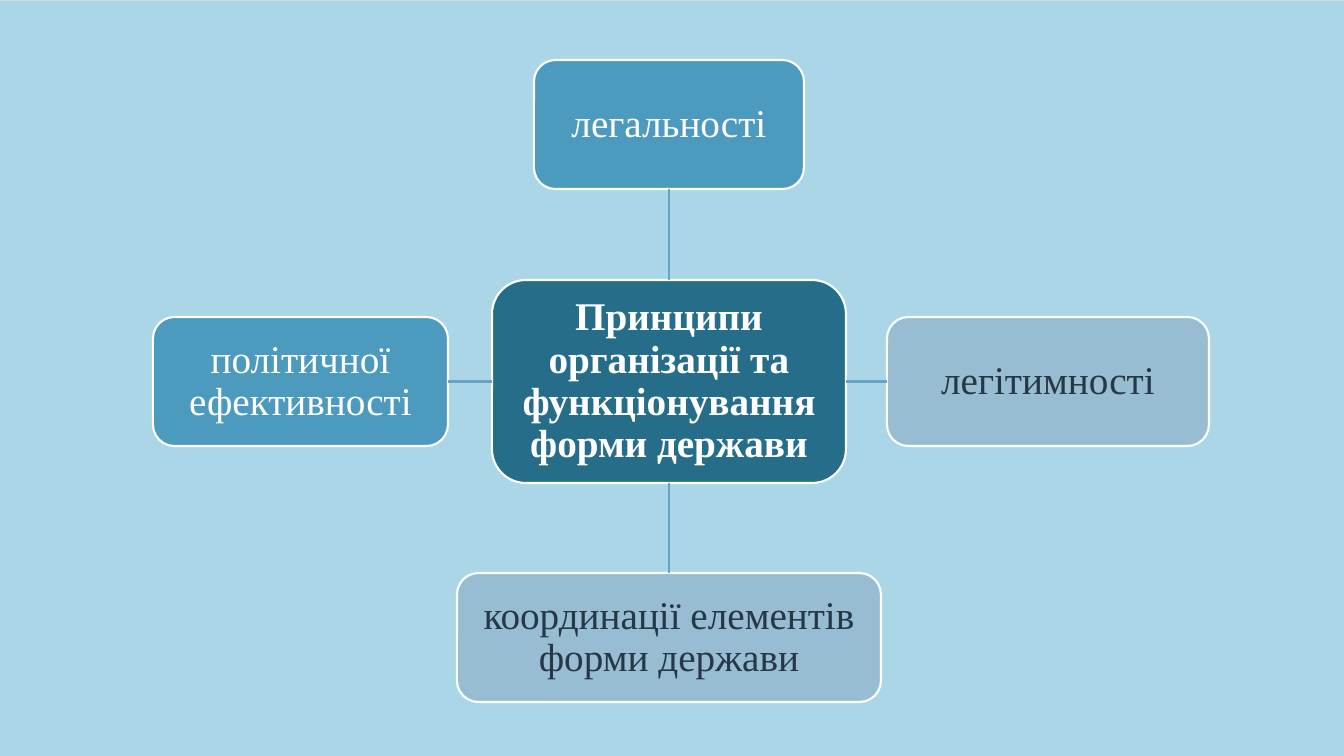
from dataclasses import dataclass

from pptx import Presentation
from pptx.dml.color import RGBColor
from pptx.enum.dml import MSO_PATTERN
from pptx.enum.shapes import MSO_CONNECTOR, MSO_SHAPE
from pptx.enum.text import MSO_ANCHOR, PP_ALIGN
from pptx.oxml.ns import qn
from pptx.shapes.autoshape import Shape
from pptx.slide import Slide
from pptx.util import Emu, Pt
from lxml import etree

ROUNDED = MSO_SHAPE.ROUNDED_RECTANGLE
STRAIGHT = MSO_CONNECTOR.STRAIGHT
MIDDLE = MSO_ANCHOR.MIDDLE
CENTER = PP_ALIGN.CENTER
DARK_HORIZONTAL = MSO_PATTERN.DARK_HORIZONTAL

SLIDE_WIDTH, SLIDE_HEIGHT = 1344, 756
EMU_PER_PX = 12192000 / SLIDE_WIDTH

SKY = RGBColor(0xAA, 0xD6, 0xE7)
GREY = RGBColor(0xD9, 0xD9, 0xD9)
WHITE = RGBColor(0xFF, 0xFF, 0xFF)
TEAL = RGBColor(0x26, 0x6D, 0x8A)
BLUE = RGBColor(0x4D, 0x9A, 0xBF)
PALE_BLUE = RGBColor(0x98, 0xBC, 0xD1)
NAVY = RGBColor(0x25, 0x38, 0x48)
LINK_BLUE = RGBColor(0x67, 0xA3, 0xC2)

FONT = "Times New Roman"
FONT_SIZE = Pt(28)
LINE_WIDTH = Pt(1.5)
TEXT_INSET = 8
TOP, LEFT, BOTTOM, RIGHT = range(4)


@dataclass(frozen=True)
class Box:
    text: str
    left: int
    top: int
    width: int
    height: int
    fill: RGBColor
    text_color: RGBColor
    bold: bool = False


@dataclass(frozen=True)
class Principle:
    box: Box
    hub_side: int
    own_side: int


HUB = Box("Принципи організації та функціонування форми держави",
          492, 280, 354, 203, TEAL, WHITE, bold=True)
PRINCIPLES = [
    Principle(Box("легальності", 534, 60, 270, 129, BLUE, WHITE), TOP, BOTTOM),
    Principle(Box("легітимності", 887, 317, 322, 129, PALE_BLUE, NAVY), RIGHT, LEFT),
    Principle(Box("координації елементів форми держави",
                  457, 573, 424, 129, PALE_BLUE, NAVY), BOTTOM, TOP),
    Principle(Box("політичної ефективності", 153, 317, 295, 129, BLUE, WHITE),
              LEFT, RIGHT),
]


def px(length: int) -> Emu:
    return Emu(round(length * EMU_PER_PX))


def add_box(slide: Slide, box: Box) -> Shape:
    shape = slide.shapes.add_shape(
        ROUNDED, px(box.left), px(box.top), px(box.width), px(box.height))
    shape.shadow.inherit = False
    shape.fill.solid()
    shape.fill.fore_color.rgb = box.fill
    shape.line.color.rgb = WHITE
    shape.line.width = LINE_WIDTH

    frame = shape.text_frame
    frame.word_wrap = True
    frame.vertical_anchor = MIDDLE
    frame.margin_left = frame.margin_right = px(TEXT_INSET)
    frame.margin_top = frame.margin_bottom = px(TEXT_INSET)
    frame.text = box.text
    paragraph = frame.paragraphs[0]
    paragraph.alignment = CENTER
    paragraph.line_spacing = 0.9
    font = paragraph.runs[0].font
    font.name = FONT
    font.size = FONT_SIZE
    font.bold = box.bold
    font.color.rgb = box.text_color
    return shape


def add_link(slide: Slide, hub: Shape, hub_side: int,
             principle: Shape, own_side: int) -> None:
    connector = slide.shapes.add_connector(STRAIGHT, 0, 0, 0, 0)
    connector.begin_connect(hub, hub_side)
    connector.end_connect(principle, own_side)
    connector.line.color.rgb = LINK_BLUE
    connector.line.width = LINE_WIDTH
    etree.SubElement(connector.element.spPr, qn("a:effectLst"))


def main() -> None:
    presentation = Presentation()
    presentation.slide_width = px(SLIDE_WIDTH)
    presentation.slide_height = px(SLIDE_HEIGHT)
    blank_layout = presentation.slide_layouts[6]
    slide = presentation.slides.add_slide(blank_layout)

    background = slide.background.fill
    background.patterned()
    background.pattern = DARK_HORIZONTAL
    background.fore_color.rgb = SKY
    background.back_color.rgb = GREY

    hub = add_box(slide, HUB)
    for principle in PRINCIPLES:
        shape = add_box(slide, principle.box)
        add_link(slide, hub, principle.hub_side, shape, principle.own_side)

    presentation.save("out.pptx")


if __name__ == "__main__":
    main()
